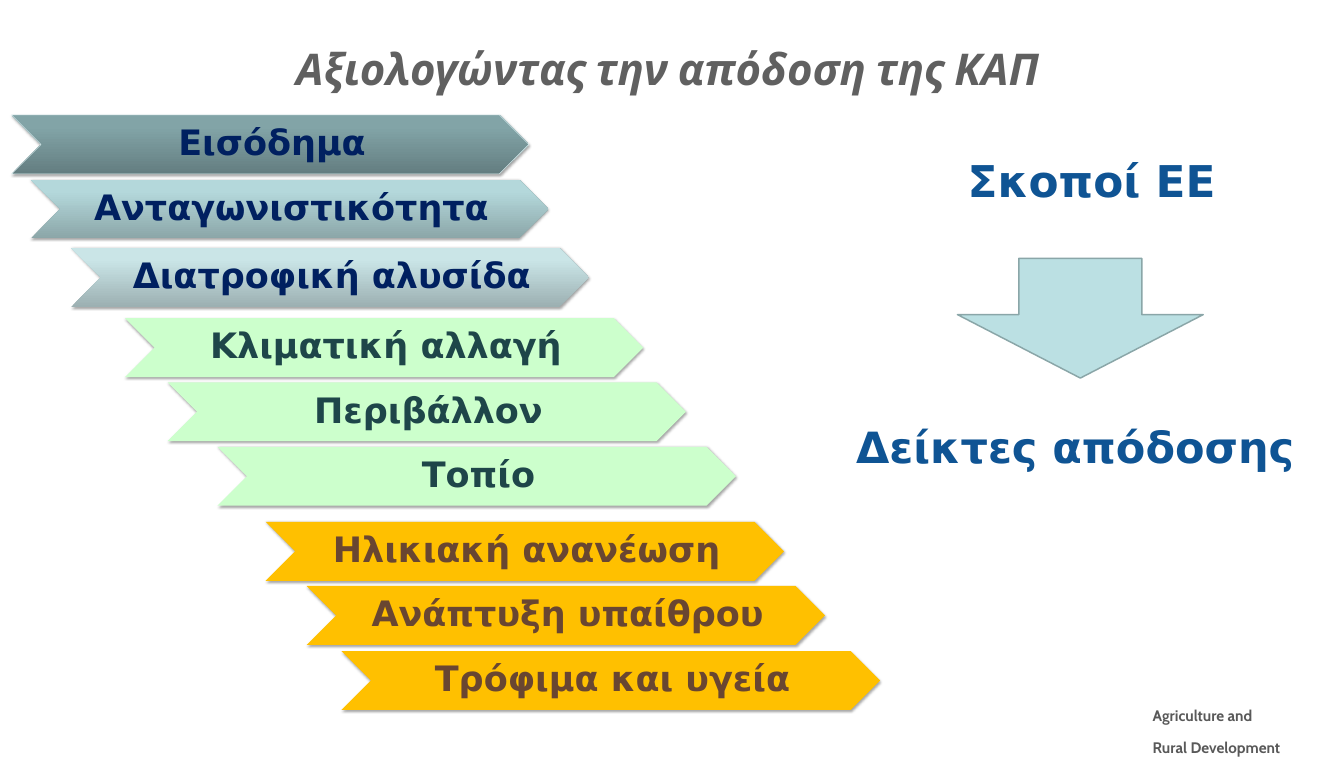
from copy import deepcopy
from lxml import etree
from pptx import Presentation, util as u
from pptx.dml.color import RGBColor
from pptx.enum import shapes, text
from pptx.oxml.ns import qn

presentation = Presentation()
presentation.slide_width = u.Inches(25.59)
presentation.slide_height = u.Inches(14.57)
slide = presentation.slides.add_slide(presentation.slide_layouts[5])


def color(value):
    return RGBColor.from_string(value)


def share(left, top, width, height):
    column = presentation.slide_width / 100
    row = presentation.slide_height / 100
    return [round(n) for n in (left * column, top * row, width * column, height * row)]


slide.background.fill.solid()
slide.background.fill.fore_color.rgb = color("FFFFFF")

title = slide.shapes.title
title.left, title.top, title.width, title.height = share(2.31, 5.15, 94.76, 9.2)
title.text_frame.text = "Αξιολογώντας την απόδοση της ΚΑΠ"
title.text_frame.auto_size = text.MSO_AUTO_SIZE.NONE
title.text_frame.vertical_anchor = text.MSO_ANCHOR.TOP
paragraph = title.text_frame.paragraphs[0]
paragraph.alignment = text.PP_ALIGN.CENTER
paragraph.font.name = "Cabin"
paragraph.font.size = u.Pt(60)
paragraph.font.bold = True
paragraph.font.italic = True
paragraph.font.color.rgb = color("606060")

NAVY, GREEN, BROWN = "002060", "1E4649", "694631"
MINT, AMBER = ["CCFFCC"], ["FFC000"]
objectives = [
    ("Εισόδημα", 0.86, 15.03, 38.5, ["647E81", "82A4A7", "82A6A9"], NAVY),
    ("Ανταγωνιστικότητα", 2.31, 23.47, 38.5, ["8BA6A8", "B4D8DB", "B4D9DC"], NAVY),
    ("Διατροφική αλυσίδα", 5.31, 32.4, 38.5, ["9CB0B2", "CAE5E7", "CAE6E9"], NAVY),
    ("Κλιματική αλλαγή", 9.3, 41.59, 38.57, MINT, GREEN),
    ("Περιβάλλον", 12.47, 49.97, 38.57, MINT, GREEN),
    ("Τοπίο", 16.18, 58.41, 38.57, MINT, GREEN),
    ("Ηλικιακή ανανέωση", 19.77, 68.22, 38.57, AMBER, BROWN),
    ("Ανάπτυξη υπαίθρου", 22.82, 76.6, 38.57, AMBER, BROWN),
    ("Τρόφιμα και υγεία", 25.4, 85.11, 40.09, AMBER, BROWN),
]
for wording, left, top, width, fills, ink in objectives:
    chevron = slide.shapes.add_shape(
        shapes.MSO_SHAPE.CHEVRON, *share(left, top, width, 7.7))
    if len(fills) == 1:
        chevron.fill.solid()
        chevron.fill.fore_color.rgb = color(fills[0])
    else:
        chevron.fill.gradient()
        chevron.fill.gradient_angle = 90
        stop_list = chevron.element.spPr.find(".//" + qn("a:gsLst"))
        stop_list.append(deepcopy(stop_list[-1]))
        for element, position in zip(stop_list, (0, 80000, 100000)):
            element.set("pos", str(position))
        for stop, value in zip(chevron.fill.gradient_stops, fills):
            stop.color.rgb = color(value)
    if wording == "Εισόδημα":
        chevron.line.color.rgb = color("DAEDEF")
        chevron.line.width = u.Pt(0.75)
    else:
        chevron.line.fill.background()

    chevron.shadow.inherit = False
    effects = chevron.element.spPr.find(qn("a:effectLst"))
    shadow = etree.SubElement(
        effects, qn("a:outerShdw"), blurRad=str(u.Pt(3.1)), dist=str(u.Pt(1.8)),
        dir="5400000", rotWithShape="0")
    black = etree.SubElement(shadow, qn("a:srgbClr"), val="000000")
    etree.SubElement(black, qn("a:alpha"), val="35000")

    frame = chevron.text_frame
    frame.text = wording
    frame.word_wrap = True
    frame.vertical_anchor = text.MSO_ANCHOR.MIDDLE
    frame.margin_left, frame.margin_right = u.Inches(0.07), 0
    frame.margin_top = frame.margin_bottom = u.Inches(0.03)
    paragraph = frame.paragraphs[0]
    paragraph.alignment = text.PP_ALIGN.CENTER
    paragraph.line_spacing = 0.9
    paragraph.font.name = "DejaVu Sans"
    paragraph.font.size = u.Pt(48)
    paragraph.font.bold = True
    paragraph.font.color.rgb = color(ink)

arrow = slide.shapes.add_shape(
    shapes.MSO_SHAPE.DOWN_ARROW, *share(71.24, 33.77, 18.29, 15.65))
arrow.adjustments[0], arrow.adjustments[1] = 0.5, 0.53
arrow.fill.solid()
arrow.fill.fore_color.rgb = color("BBE0E3")
arrow.line.color.rgb = color("8AA6A8")
arrow.line.width = u.Pt(2)
arrow.shadow.inherit = False

labels = [
    ("Σκοποί ΕΕ", (68.15, 19.9, 26.14, 7.21), 60, text.PP_ALIGN.CENTER),
    ("Δείκτες απόδοσης", (63.54, 54.84, 34.86, 7.07), 59, text.PP_ALIGN.LEFT),
]
for wording, place, size, alignment in labels:
    frame = slide.shapes.add_textbox(*share(*place)).text_frame
    frame.text = wording
    frame.word_wrap = True
    frame.margin_left = frame.margin_right = u.Inches(0.04)
    frame.margin_top = frame.margin_bottom = u.Inches(0.02)
    paragraph = frame.paragraphs[0]
    paragraph.alignment = alignment
    paragraph.font.name = "DejaVu Sans"
    paragraph.font.size = u.Pt(size)
    paragraph.font.bold = True
    paragraph.font.color.rgb = color("0F5494")

department = slide.shapes.add_textbox(*share(85.38, 91.63, 12.31, 6.25)).text_frame
department.word_wrap = True
department.text = "Agriculture and\nRural Development"
for paragraph in department.paragraphs:
    paragraph.font.name = "Cabin"
    paragraph.font.size = u.Pt(36)
    paragraph.font.bold = True
    paragraph.font.color.rgb = color("595959")
    paragraph.runs[0].font._element.set("baseline", "30000")

presentation.save("out.pptx")
